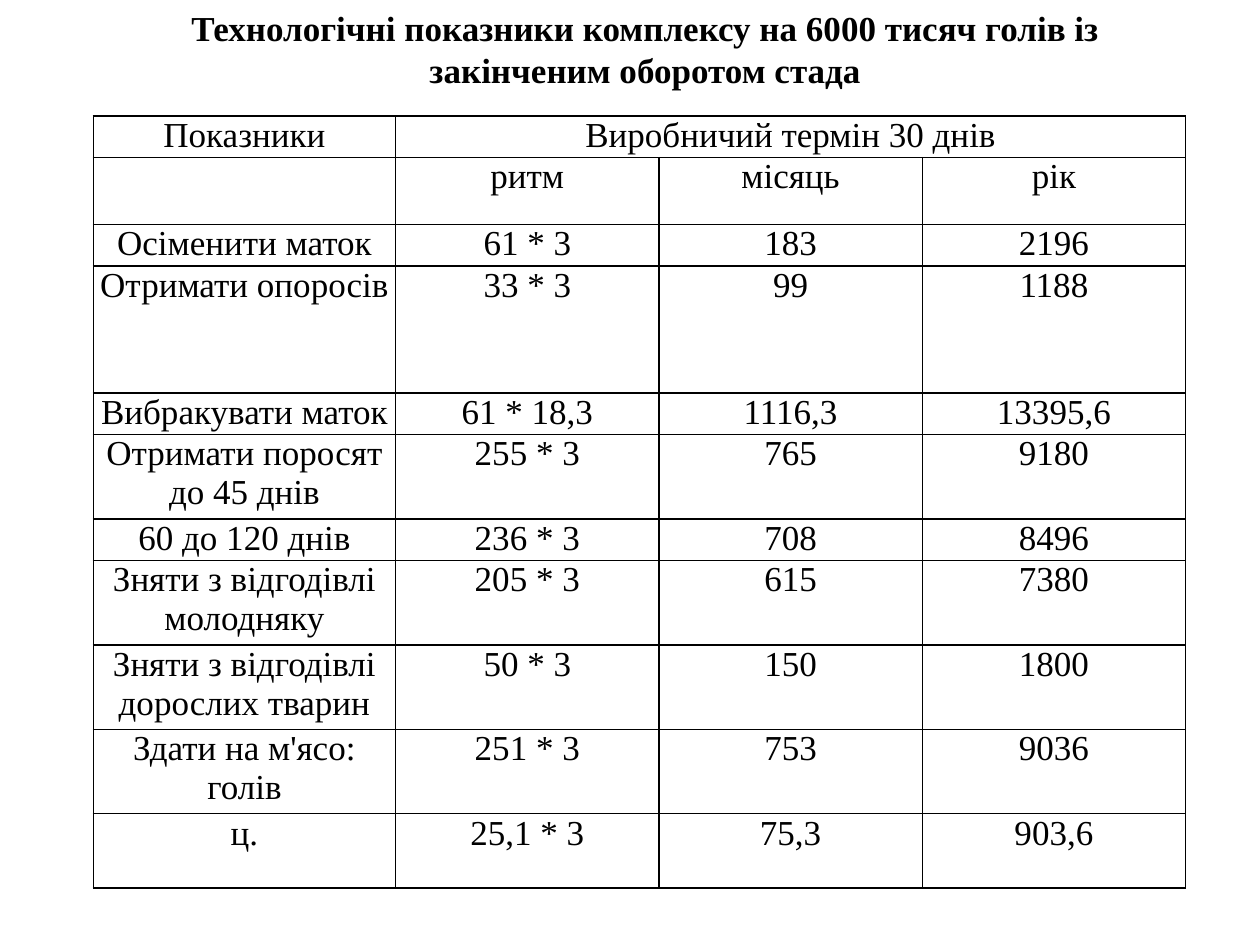
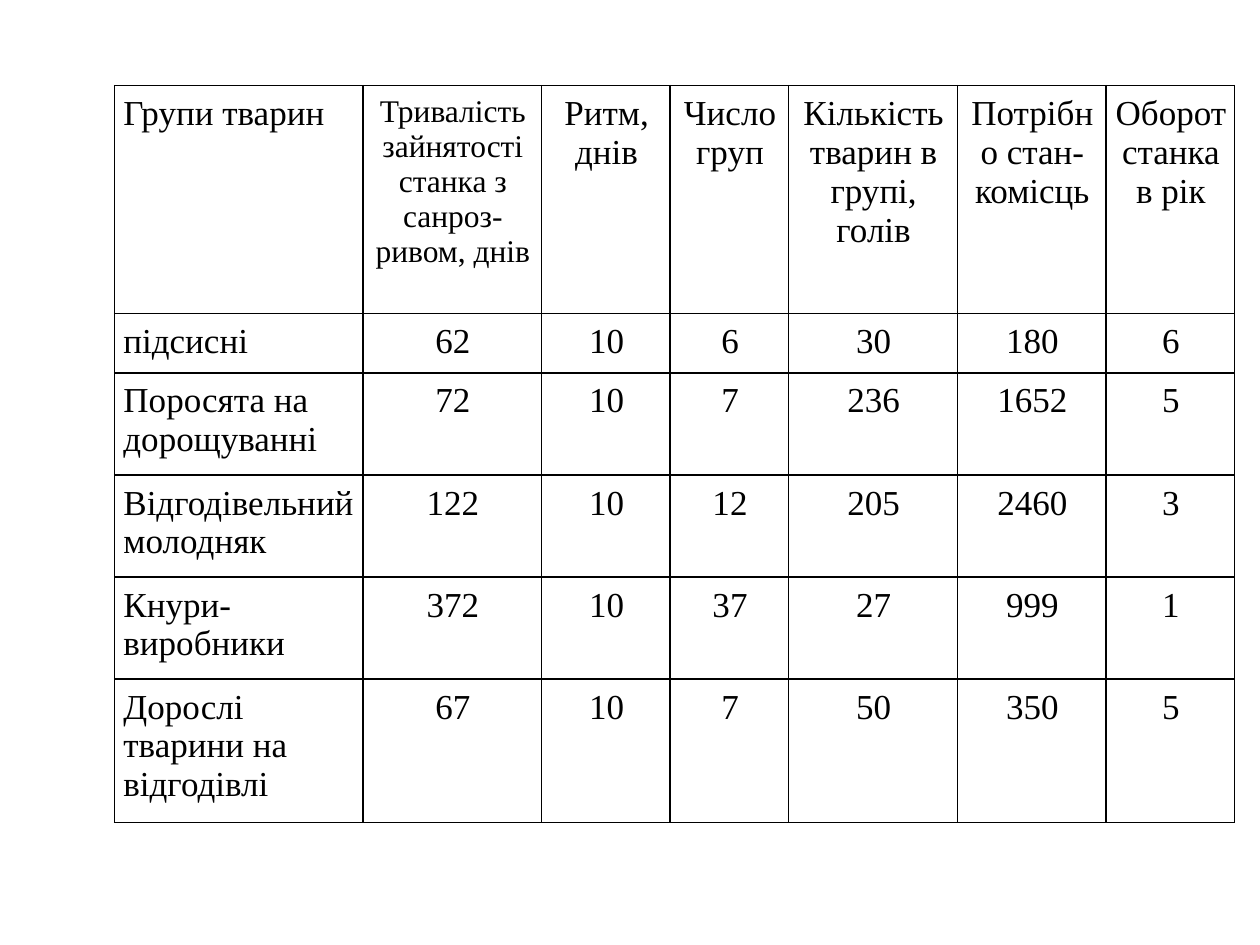
from lxml import etree
from pptx import Presentation
from pptx.dml.color import RGBColor
from pptx.enum.text import MSO_ANCHOR, PP_ALIGN
from pptx.oxml.ns import qn
from pptx.util import Inches, Pt

LEFT, CENTER = PP_ALIGN.LEFT, PP_ALIGN.CENTER
TOP = MSO_ANCHOR.TOP
COLORS = {"text": "000000", "paper": "FFFFFF", "border": "000000"}
FONT = "Times New Roman"
BODY_SIZE = 20
TITLE_ONLY, BLANK = 5, 6

TITLE = ("Технологічні показники комплексу на 6000 тисяч голів "
         "із закінченим оборотом стада")
INDICATORS = [
    ["Показники", "Виробничий термін 30 днів", "", ""],
    ["", "ритм", "місяць", "рік"],
    ["Осіменити маток", "61 * 3", "183", "2196"],
    ["Отримати опоросів", "33 * 3", "99", "1188"],
    ["Вибракувати маток", "61 * 18,3", "1116,3", "13395,6"],
    ["Отримати поросят до 45 днів", "255 * 3", "765", "9180"],
    ["60 до 120 днів", "236 * 3", "708", "8496"],
    ["Зняти з відгодівлі молодняку", "205 * 3", "615", "7380"],
    ["Зняти з відгодівлі дорослих тварин", "50 * 3", "150", "1800"],
    ["Здати на м'ясо: голів", "251 * 3", "753", "9036"],
    ["ц.", "25,1 * 3", "75,3", "903,6"],
]
HERD_GROUPS = [
    ["Групи тварин", "Тривалість зайнятості станка з санроз-ривом, днів",
     "Ритм, днів", "Число груп", "Кількість тварин в групі, голів",
     "Потрібно стан-комісць", "Оборот станка в рік"],
    ["підсисні", "62", "10", "6", "30", "180", "6"],
    ["Поросята на дорощуванні", "72", "10", "7", "236", "1652", "5"],
    ["Відгодівельний молодняк", "122", "10", "12", "205", "2460", "3"],
    ["Кнури-виробники", "372", "10", "37", "27", "999", "1"],
    ["Дорослі тварини на відгодівлі", "67", "10", "7", "50", "350", "5"],
]


def rgb(name):
    return RGBColor.from_string(COLORS[name])


def write(tf, text, align, size=BODY_SIZE, bold=False):
    p = tf.paragraphs[0]
    p.alignment = align
    if text:
        r = p.add_run()
        r.text = text
        r.font.name, r.font.size, r.font.bold = FONT, Pt(size), bold
        r.font.color.rgb = rgb("text")
    return p


def set_borders(cell):
    """Outline a cell; the lines must precede the fill in tcPr."""
    tc_pr = cell._tc.get_or_add_tcPr()
    for i, side in enumerate(("lnL", "lnR", "lnT", "lnB")):
        ln = etree.Element(qn(f"a:{side}"), w=str(Pt(1)))
        fill = etree.SubElement(ln, qn("a:solidFill"))
        etree.SubElement(fill, qn("a:srgbClr"), val=COLORS["border"])
        tc_pr.insert(i, ln)


def add_grid(s, left, top, widths, heights, rows, margins,
             first_align=CENTER, sizes=None):
    """Margins run left, top, right, bottom; sizes maps (row, column) to points."""
    table = s.shapes.add_table(
        len(rows), len(widths), Inches(left), Inches(top),
        Inches(sum(widths)), Inches(sum(heights))).table
    table.first_row = table.horz_banding = False
    for column, width in zip(table.columns, widths):
        column.width = Inches(width)
    for i, (row, height) in enumerate(zip(rows, heights)):
        table.rows[i].height = Inches(height)
        for j, text in enumerate(row):
            cell = table.cell(i, j)
            (cell.margin_left, cell.margin_top,
             cell.margin_right, cell.margin_bottom) = map(Inches, margins)
            cell.fill.solid()
            cell.fill.fore_color.rgb = rgb("paper")
            set_borders(cell)
            write(cell.text_frame, text, first_align if j == 0 else CENTER,
                  (sizes or {}).get((i, j), BODY_SIZE))
    return table


def add_title(s, left, top, width, height):
    title = s.shapes.title
    title.left, title.top = Inches(left), Inches(top)
    title.width, title.height = Inches(width), Inches(height)
    tf = title.text_frame
    tf.word_wrap = True
    tf.vertical_anchor = TOP
    write(tf, TITLE, CENTER, bold=True).line_spacing = Pt(24)


def add_indicators_slide(prs):
    s = prs.slides.add_slide(prs.slide_layouts[TITLE_ONLY])
    one_line, two_lines = 0.33, 0.67
    heights = [one_line, 0.53, one_line, 1.01, one_line, two_lines, one_line,
               two_lines, two_lines, two_lines, 0.59]
    table = add_grid(s, 0.74, 0.92, [2.4] + [2.09] * 3, heights, INDICATORS,
                     (0, 0, 0, 0))
    table.cell(0, 1).merge(table.cell(0, 3))
    add_title(s, 0.75, 0, 8.74, 0.77)


def add_herd_slide(prs):
    s = prs.slides.add_slide(prs.slide_layouts[BLANK])
    add_grid(s, 0.91, 0.68, [1.97, 1.42, 1.02, 0.94, 1.34, 1.18, 1.02],
             [1.81, 0.47] + [0.81] * 3 + [1.14], HERD_GROUPS,
             (0.07, 0.07, 0.06, 0.07), first_align=LEFT, sizes={(0, 1): 18})


def main():
    prs = Presentation()
    prs.slide_width, prs.slide_height = Inches(10), Inches(7.5)
    add_indicators_slide(prs)
    add_herd_slide(prs)
    prs.save("out.pptx")


if __name__ == "__main__":
    main()
